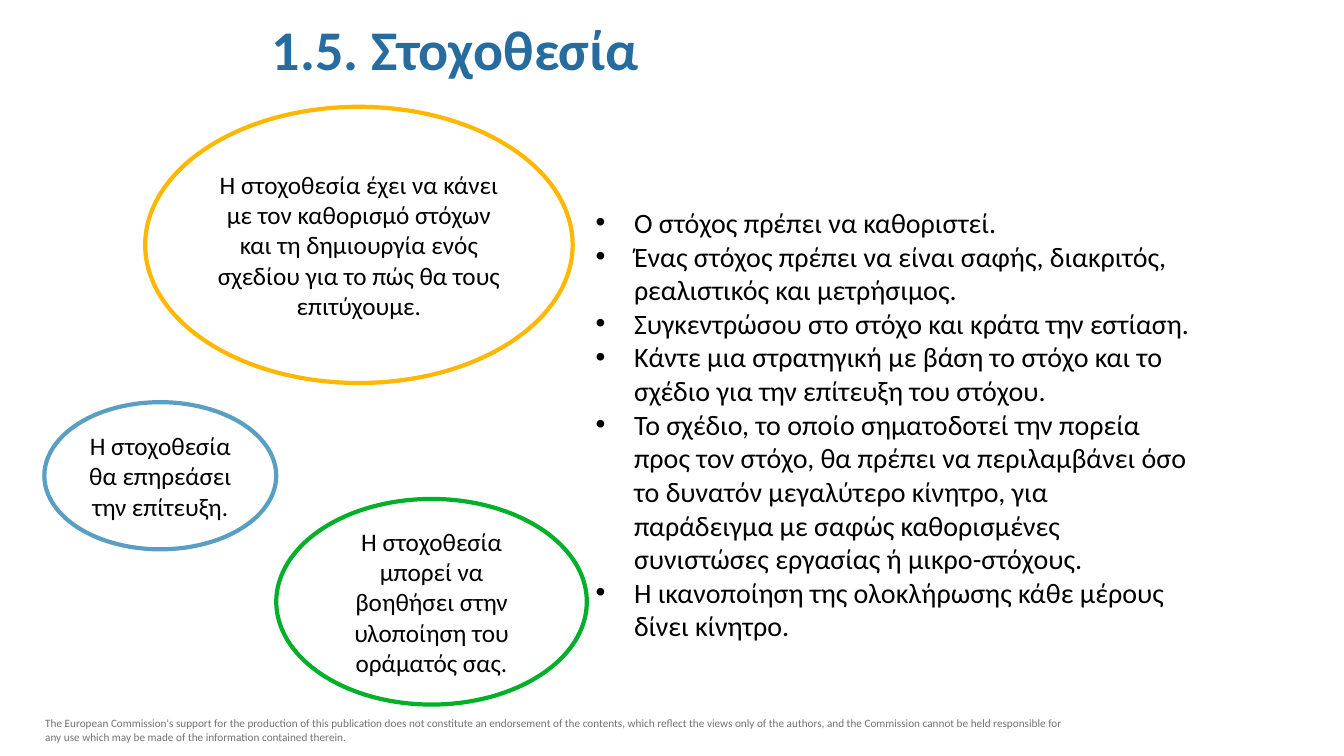
"""Build the goal-setting slide: title, three ellipses, bullet list and disclaimer."""
from lxml import etree
from pptx import Presentation
from pptx import util as u
from pptx.dml.color import RGBColor
from pptx.enum import shapes, text
from pptx.oxml.ns import qn

COLOURS = {
    "title": "266C9F",
    "body": "000000",
    "disclaimer": "767171",
    "fill": "FFFFFF",
    "green": "00B028",
    "blue": "599FC3",
    "yellow": "FFB700",
}

TITLE = "1.5. Στοχοθεσία"
DISCLAIMER = (
    "The European Commission's support for the production of this publication does not "
    "constitute an endorsement of the contents, which reflect the views only of the authors, "
    "and the Commission cannot be held responsible for any use which may be made of the "
    "information contained therein."
)
GOAL_RULES = [
    "Ο στόχος πρέπει να καθοριστεί.",
    "Ένας στόχος πρέπει να είναι σαφής, διακριτός, ρεαλιστικός και μετρήσιμος.",
    "Συγκεντρώσου στο στόχο και κράτα την εστίαση.",
    "Κάντε μια στρατηγική με βάση το στόχο και το σχέδιο για την επίτευξη του στόχου.",
    "Το σχέδιο, το οποίο σηματοδοτεί την πορεία προς τον στόχο, θα πρέπει να περιλαμβάνει "
    "όσο το δυνατόν μεγαλύτερο κίνητρο, για παράδειγμα με σαφώς καθορισμένες συνιστώσες "
    "εργασίας ή μικρο-στόχους.",
    "Η ικανοποίηση της ολοκλήρωσης κάθε μέρους δίνει κίνητρο.",
]
ELLIPSES = [
    ("green", (2.74, 4.95, 3.08, 2.04),
     "Η στοχοθεσία μπορεί να βοηθήσει στην υλοποίηση του οράματός σας."),
    ("blue", (0.44, 3.99, 2.3, 1.46),
     "Η στοχοθεσία θα επηρεάσει την επίτευξη."),
    ("yellow", (1.44, 1.06, 4.24, 2.74),
     "Η στοχοθεσία έχει να κάνει με τον καθορισμό στόχων και τη δημιουργία ενός "
     "σχεδίου για το πώς θα τους επιτύχουμε."),
]


def write(frame, wording, size, colour, align=text.PP_ALIGN.LEFT, bold=False):
    """Fill a text frame and format every run in it."""
    frame.word_wrap = True
    frame.text = wording
    for para in frame.paragraphs:
        para.alignment = align
        for span in para.runs:
            span.font.name = "Calibri"
            span.font.size = u.Pt(size)
            span.font.bold = bold
            span.font.color.rgb = RGBColor.from_string(COLOURS[colour])


def add_text(place, *style):
    """Add a text box at a place in inches and return its frame."""
    frame = slide.shapes.add_textbox(*map(u.Inches, place)).text_frame
    write(frame, *style)
    frame.auto_size = text.MSO_AUTO_SIZE.SHAPE_TO_FIT_TEXT
    return frame


deck = Presentation()
deck.slide_width = u.Inches(13.33)
deck.slide_height = u.Inches(7.5)
slide = deck.slides.add_slide(deck.slide_layouts[6])

add_text((0.35, 7.06, 10.46, 0.37), DISCLAIMER, 8, "disclaimer")

rules = add_text((5.81, 1.99, 6.11, 4.47), "\n".join(GOAL_RULES), 20, "body")
for para in rules.paragraphs:
    properties = para._p.get_or_add_pPr()
    properties.set("marL", str(u.Inches(0.38)))
    properties.set("indent", str(u.Inches(-0.38)))
    etree.SubElement(properties, qn("a:buFont"), typeface="Arial")
    etree.SubElement(properties, qn("a:buChar"), char="•")

add_text((1.45, 0.09, 6.13, 0.77), TITLE, 40, "title", text.PP_ALIGN.CENTER, True)

for outline, place, wording in ELLIPSES:
    ellipse = slide.shapes.add_shape(shapes.MSO_SHAPE.OVAL, *map(u.Inches, place))
    ellipse.shadow.inherit = False
    ellipse.fill.solid()
    ellipse.fill.fore_color.rgb = RGBColor.from_string(COLOURS["fill"])
    ellipse.line.color.rgb = RGBColor.from_string(COLOURS[outline])
    ellipse.line.width = u.Pt(3)
    ellipse.text_frame.vertical_anchor = text.MSO_ANCHOR.MIDDLE
    write(ellipse.text_frame, wording, 18, "body", text.PP_ALIGN.CENTER)

deck.save("out.pptx")
